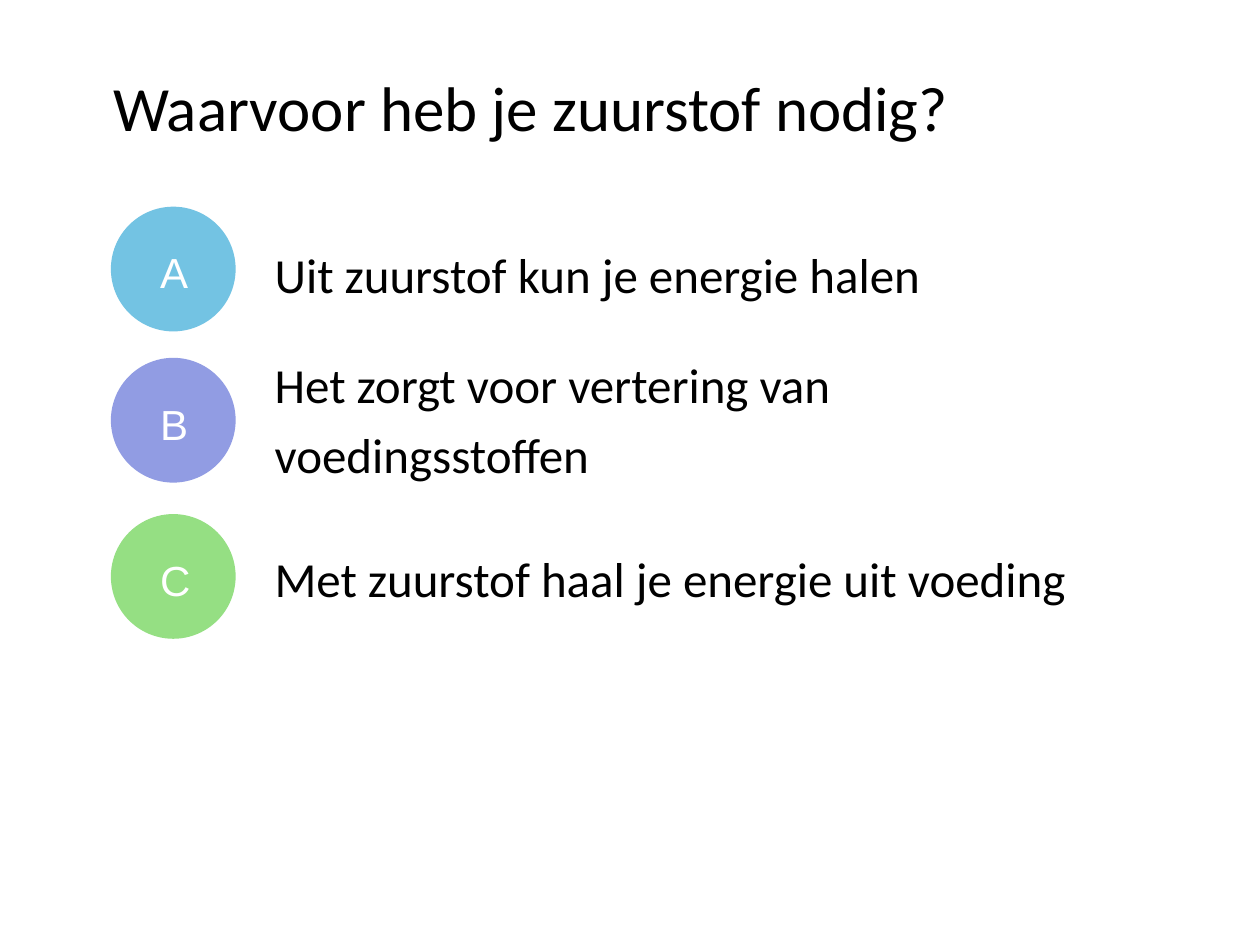
import dataclasses

import pptx
import pptx.dml.color
import pptx.enum.shapes
import pptx.enum.text
import pptx.shapes.shapetree
import pptx.util

BLACK = pptx.dml.color.RGBColor(0x00, 0x00, 0x00)
WHITE = pptx.dml.color.RGBColor(0xFF, 0xFF, 0xFF)
BLUE = pptx.dml.color.RGBColor(0x73, 0xC3, 0xE3)
PURPLE = pptx.dml.color.RGBColor(0x91, 0x9C, 0xE3)
GREEN = pptx.dml.color.RGBColor(0x95, 0xDF, 0x83)

GRID_COLUMNS = 100
GRID_ROWS = 75
CELL = pptx.util.Inches(0.1)
BADGE_COLUMN = 8.8
BADGE_SIZE = 9.9
LETTER_WIDTH = 3.9
LETTER_HEIGHT = 4.7
ANSWER_COLUMN = 21.4
ANSWER_WIDTH = 67.3
ANSWER_HEIGHT = 6.4


@dataclasses.dataclass(frozen=True)
class Area:
    column: float
    row: float
    columns: float
    rows: float

    def lengths(self) -> tuple[int, ...]:
        return tuple(round(cells * CELL) for cells in dataclasses.astuple(self))


@dataclasses.dataclass(frozen=True)
class TextStyle:
    font: str
    size: int
    color: pptx.dml.color.RGBColor
    line_spacing: float = 1.2
    anchor: pptx.enum.text.MSO_ANCHOR = pptx.enum.text.MSO_ANCHOR.MIDDLE
    side_margin: float = 0.04
    edge_margin: float = 0.04


@dataclasses.dataclass(frozen=True)
class Answer:
    letter: str
    text: str
    color: pptx.dml.color.RGBColor
    badge_row: float
    text_row: float


TITLE_STYLE = TextStyle("Calibri", 36, BLACK, 1.11, pptx.enum.text.MSO_ANCHOR.TOP, 0.1, 0.05)
LETTER_STYLE = TextStyle("Arial", 24, WHITE)
ANSWER_STYLE = TextStyle("Calibri", 28, BLACK)

TITLE = "Waarvoor heb je zuurstof nodig?"
ANSWERS = (
    Answer("A", "Uit zuurstof kun je energie halen", BLUE, 16.4, 18.1),
    Answer("B", "Het zorgt voor vertering van voedingsstoffen", PURPLE, 28.4, 29.6),
    Answer("C", "Met zuurstof haal je energie uit voeding", GREEN, 40.8, 42.2),
)


def add_text(
    shapes: pptx.shapes.shapetree.SlideShapes | pptx.shapes.shapetree.GroupShapes,
    area: Area,
    text: str,
    style: TextStyle,
) -> None:
    frame = shapes.add_textbox(*area.lengths()).text_frame
    frame.word_wrap = True
    frame.vertical_anchor = style.anchor
    frame.margin_left = frame.margin_right = pptx.util.Inches(style.side_margin)
    frame.margin_top = frame.margin_bottom = pptx.util.Inches(style.edge_margin)
    paragraph = frame.paragraphs[0]
    paragraph.line_spacing = style.line_spacing
    run = paragraph.add_run()
    run.text = text
    run.font.name = style.font
    run.font.size = pptx.util.Pt(style.size)
    run.font.color.rgb = style.color


def add_badge(shapes: pptx.shapes.shapetree.SlideShapes, answer: Answer) -> None:
    group = shapes.add_group_shape()
    circle_area = Area(BADGE_COLUMN, answer.badge_row, BADGE_SIZE, BADGE_SIZE)
    circle = group.shapes.add_shape(
        pptx.enum.shapes.MSO_SHAPE.OVAL, *circle_area.lengths()
    )
    circle.shadow.inherit = False
    circle.fill.solid()
    circle.fill.fore_color.rgb = answer.color
    circle.line.fill.background()
    letter_area = Area(
        BADGE_COLUMN + 3.5,
        answer.badge_row + 2.45,
        LETTER_WIDTH,
        LETTER_HEIGHT,
    )
    add_text(group.shapes, letter_area, answer.letter, LETTER_STYLE)


def main() -> None:
    presentation = pptx.Presentation()
    presentation.slide_width = GRID_COLUMNS * CELL
    presentation.slide_height = GRID_ROWS * CELL
    slide = presentation.slides.add_slide(presentation.slide_layouts[6])
    for answer in ANSWERS:
        add_badge(slide.shapes, answer)
    for answer in ANSWERS:
        area = Area(ANSWER_COLUMN, answer.text_row, ANSWER_WIDTH, ANSWER_HEIGHT)
        add_text(slide.shapes, area, answer.text, ANSWER_STYLE)
    add_text(slide.shapes, Area(8, 4.3, 88.7, 9.4), TITLE, TITLE_STYLE)
    presentation.save("out.pptx")


if __name__ == "__main__":
    main()
